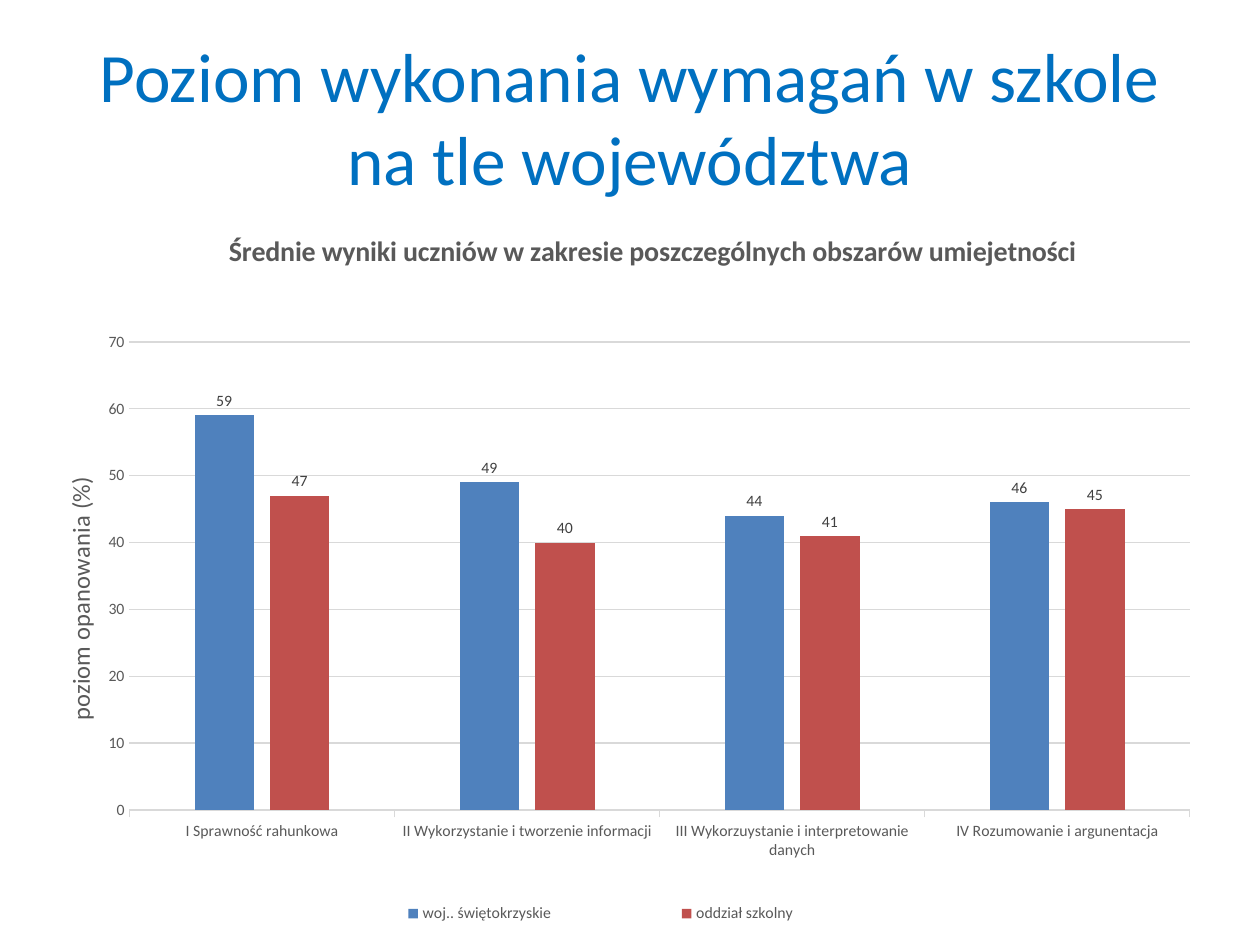
from lxml.etree import SubElement
from pptx import Presentation
from pptx.chart.data import CategoryChartData
from pptx.dml.color import RGBColor
from pptx.enum.chart import XL_CHART_TYPE as ChartType
from pptx.enum.chart import XL_LABEL_POSITION as LabelPosition
from pptx.enum.chart import XL_LEGEND_POSITION as LegendPosition
from pptx.enum.chart import XL_TICK_MARK as TickMark
from pptx.enum.text import MSO_ANCHOR as Anchor
from pptx.enum.text import PP_ALIGN as Align
from pptx.oxml.ns import qn
from pptx.util import Cm, Pt

TITLE_BLUE = RGBColor(0x00, 0x70, 0xC0)
TEXT_GRAY = RGBColor(0x59, 0x59, 0x59)
LABEL_GRAY = RGBColor(0x40, 0x40, 0x40)
LINE_GRAY = RGBColor(0xD9, 0xD9, 0xD9)
BLUE = RGBColor(0x4F, 0x81, 0xBD)
RED = RGBColor(0xC0, 0x50, 0x4D)
FONT = "Calibri"

TITLE = "Poziom wykonania wymagań w szkole na tle województwa"
CHART_TITLE = "Średnie wyniki uczniów w zakresie poszczególnych obszarów umiejetności"
AXIS_TITLE = "poziom opanowania (%)"
CATEGORIES = [
    "I Sprawność rahunkowa",
    "II Wykorzystanie i tworzenie informacji",
    "III Wykorzuystanie i interpretowanie danych",
    "IV Rozumowanie i argunentacja",
]
SERIES = [
    ("woj.. świętokrzyskie", (59, 49, 44, 46), BLUE),
    ("oddział szkolny", (47, 40, 41, 45), RED),
]


def set_format(target, values):
    for name, value in values.items():
        setattr(target, name, value)


def set_font(font, size, color, bold=False):
    set_format(font, {"name": FONT, "size": Pt(size), "bold": bold})
    font.color.rgb = color


def set_line(line):
    line.color.rgb = LINE_GRAY
    line.width = Pt(0.75)


def place(element, values):
    for old in element.findall(qn("c:layout")):
        element.remove(old)
    layout = SubElement(element, qn("c:layout"))
    manual = SubElement(layout, qn("c:manualLayout"))
    for name, value in values.items():
        SubElement(manual, qn(f"c:{name}")).set("val", str(value))
    return layout


def add_title(owner, text, size, bold, x, y):
    frame = owner.text_frame
    frame.text = text
    set_font(frame.paragraphs[0].runs[0].font, size, TEXT_GRAY, bold)
    element = frame._txBody.getparent().getparent()
    layout = place(element, {"xMode": "edge", "yMode": "edge", "x": x, "y": y})
    element.find(qn("c:tx")).addnext(layout)


def add_heading(slide):
    shape = slide.shapes.add_textbox(Cm(1.27), Cm(0.76), Cm(22.86), Cm(3.18))
    frame = shape.text_frame
    set_format(frame, {"word_wrap": True, "vertical_anchor": Anchor.MIDDLE})
    paragraph = frame.paragraphs[0]
    paragraph.alignment = Align.CENTER
    run = paragraph.add_run()
    run.text = TITLE
    set_font(run.font, 39.6, TITLE_BLUE)


def add_results_chart(slide):
    data = CategoryChartData()
    data.categories = CATEGORIES
    for name, values, _ in SERIES:
        data.add_series(name, values)
    chart = slide.shapes.add_chart(
        ChartType.COLUMN_CLUSTERED, Cm(0.71), Cm(4.11), Cm(23.75), Cm(15.47), data
    ).chart
    set_font(chart.font, 10, TEXT_GRAY)
    add_title(chart.chart_title, CHART_TITLE, 16, True, 0.16, 0.03)

    plot = chart.plots[0]
    set_format(plot, {"gap_width": 219, "overlap": -27, "vary_by_categories": False})
    for series, (_, _, color) in zip(plot.series, SERIES):
        series.format.fill.solid()
        series.format.fill.fore_color.rgb = color
        labels = series.data_labels
        set_format(labels, {"show_value": True, "position": LabelPosition.OUTSIDE_END})
        set_font(labels.font, 9, LABEL_GRAY)

    category_axis, value_axis = chart.category_axis, chart.value_axis
    for axis in (category_axis, value_axis):
        axis.minor_tick_mark = TickMark.NONE
        set_font(axis.tick_labels.font, 9, TEXT_GRAY)
    category_axis.major_tick_mark = TickMark.OUTSIDE
    set_line(category_axis.format.line)
    set_format(value_axis, {
        "major_tick_mark": TickMark.NONE, "minimum_scale": 0,
        "maximum_scale": 70, "major_unit": 10,
    })
    value_axis.format.line.fill.background()
    set_line(value_axis.major_gridlines.format.line)
    add_title(value_axis.axis_title, AXIS_TITLE, 14, False, 0.02, 0.35)

    chart.has_legend = True
    legend = chart.legend
    set_format(legend, {"position": LegendPosition.BOTTOM, "include_in_layout": False})
    set_font(legend.font, 9, TEXT_GRAY)
    edges = {"xMode": "edge", "yMode": "edge"}
    legend_layout = place(legend._element, {**edges, "x": 0.21, "y": 0.9, "w": 0.54, "h": 0.05})
    legend._element.find(qn("c:legendPos")).addnext(legend_layout)
    plot_area = chart._chartSpace.chart.plotArea
    plot_layout = place(plot_area, {
        "layoutTarget": "inner", **edges, "x": 0.08, "y": 0.18, "w": 0.9, "h": 0.61,
    })
    plot_area.insert(0, plot_layout)


def main():
    presentation = Presentation()
    set_format(presentation, {"slide_width": Cm(25.4), "slide_height": Cm(19.05)})
    slide = presentation.slides.add_slide(presentation.slide_layouts[6])
    add_heading(slide)
    add_results_chart(slide)
    presentation.save("out.pptx")


if __name__ == "__main__":
    main()
